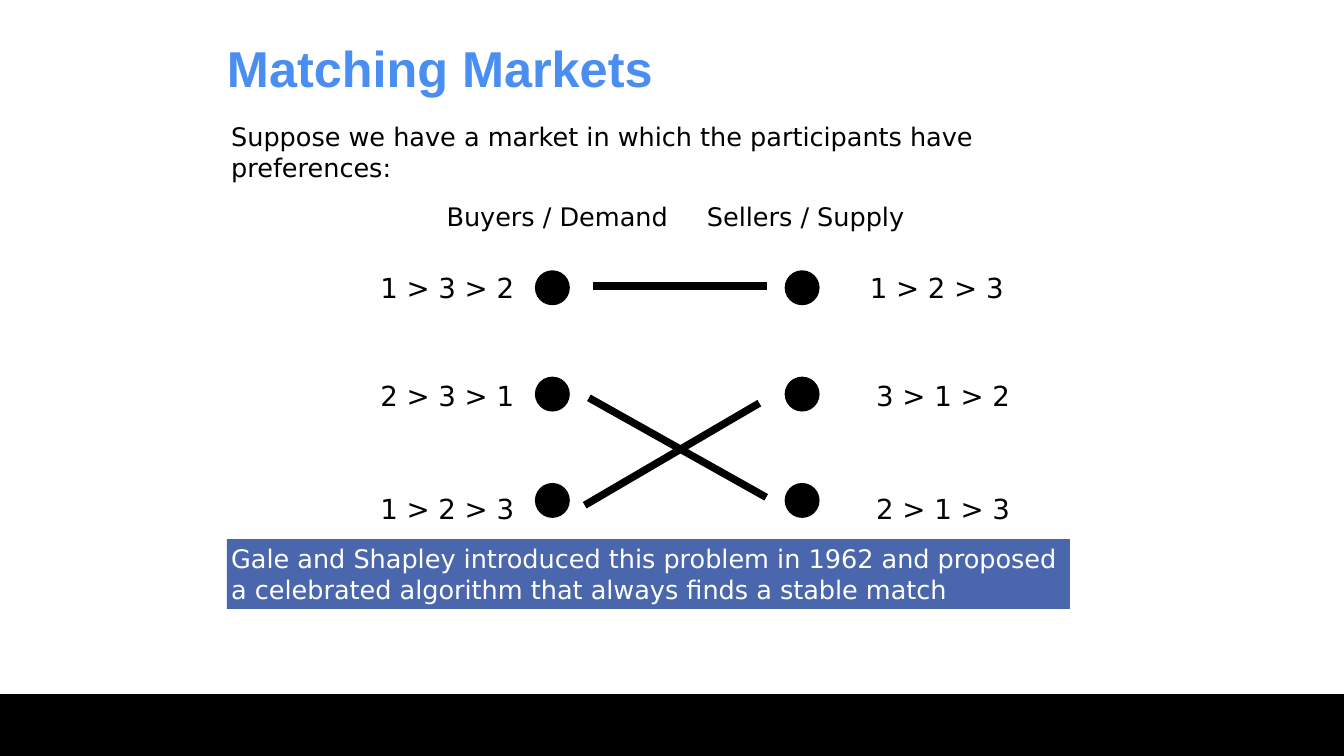
from lxml.etree import SubElement
from pptx import Presentation
from pptx.dml.color import RGBColor
from pptx.enum.shapes import MSO_CONNECTOR, MSO_SHAPE
from pptx.enum.text import MSO_ANCHOR, PP_ALIGN
from pptx.oxml.ns import qn
from pptx.util import Cm, Pt

COLORS = {"ink": "000000", "paper": "FFFFFF", "title": "4A8EF2", "note": "4A66AC"}
TITLE = "Matching Markets"
INTRO = "Suppose we have a market in which the participants have preferences:"
NOTE = ("Gale and Shapley introduced this problem in 1962 and proposed "
        "a celebrated algorithm that always finds a stable match")
SIDES = [
    {"head": "Buyers / Demand", "head_x": 8.36, "head_w": 4.45, "dot_x": 10.11,
     "prefs": [("1 > 3 > 2", 7.11), ("2 > 3 > 1", 7.11), ("1 > 2 > 3", 7.11)]},
    {"head": "Sellers / Supply", "head_x": 13.28, "head_w": 4.04, "dot_x": 14.83,
     "prefs": [("1 > 2 > 3", 16.36), ("3 > 1 > 2", 16.48), ("2 > 1 > 3", 16.48)]},
]
MATCHES = [
    (11.2, 5.41, 14.5, 5.41),
    (11.05, 9.55, 14.35, 7.62),
    (11.13, 7.52, 14.48, 9.4),
]
PREF_TOPS = [5.03, 7.09, 9.22]
DOT_TOP, DOT_STEP, DOT_SIZE = 5.11, 2.01, 0.66
WIDTH, HEIGHT, FOOTER_TOP = 25.4, 14.29, 13.12
BODY = {"name": "DejaVu Sans", "size": Pt(13.7), "bold": False}
PREF = {**BODY, "size": Pt(14.8)}
HEADING = {"name": "Arial", "size": Pt(27), "bold": True}


def rgb(key):
    return RGBColor.from_string(COLORS[key])


def write(sp, text, font, color="ink", wrap=False, margin=0.08, anchor=MSO_ANCHOR.MIDDLE):
    tf = sp.text_frame
    frame = {"word_wrap": wrap, "vertical_anchor": anchor}
    for side in ("left", "right", "top", "bottom"):
        frame[f"margin_{side}"] = Cm(margin)
    for name, value in frame.items():
        setattr(tf, name, value)
    p = tf.paragraphs[0]
    p.alignment = PP_ALIGN.LEFT
    r = p.add_run()
    r.text = text
    for name, value in font.items():
        setattr(r.font, name, value)
    r.font.color.rgb = rgb(color)


def add_text(s, box, *args, **kwargs):
    write(s.shapes.add_textbox(*map(Cm, box)), *args, **kwargs)


def add_filled(s, kind, box, color):
    sp = s.shapes.add_shape(kind, *map(Cm, box))
    sp.shadow.inherit = False
    sp.fill.solid()
    sp.fill.fore_color.rgb = rgb(color)
    sp.line.fill.background()
    return sp


def add_match(s, ends):
    line = s.shapes.add_connector(MSO_CONNECTOR.STRAIGHT, *map(Cm, ends))
    line.line.color.rgb = rgb("ink")
    line.line.width = Pt(4)
    SubElement(line._element.spPr, qn("a:effectLst"))


def main():
    prs = Presentation()
    prs.slide_width, prs.slide_height = Cm(WIDTH), Cm(HEIGHT)
    s = prs.slides.add_slide(prs.slide_layouts[5])
    add_filled(s, MSO_SHAPE.RECTANGLE, (0, FOOTER_TOP, WIDTH, HEIGHT - FOOTER_TOP), "ink")

    title = s.shapes.title
    for name, value in zip(("left", "top", "width", "height"), (4.04, 0.46, 8.64, 1.42)):
        setattr(title, name, Cm(value))
    write(title, TITLE, HEADING, "title", margin=0.25, anchor=MSO_ANCHOR.TOP)

    add_text(s, (4.29, 2.21, 16.84, 1.32), INTRO, BODY, wrap=True)
    for side in SIDES:
        add_text(s, (side["head_x"], 3.71, side["head_w"], 0.74), side["head"], BODY)
        for i, (order, x) in enumerate(side["prefs"]):
            dot = (side["dot_x"], DOT_TOP + i * DOT_STEP, DOT_SIZE, DOT_SIZE)
            add_filled(s, MSO_SHAPE.OVAL, dot, "ink")
            add_text(s, (x, PREF_TOPS[i], 2.77, 0.79), order, PREF)

    note = add_filled(s, MSO_SHAPE.RECTANGLE, (4.29, 10.19, 15.93, 1.32), "note")
    write(note, NOTE, BODY, "paper", wrap=True)
    for ends in MATCHES:
        add_match(s, ends)
    prs.save("out.pptx")


if __name__ == "__main__":
    main()
